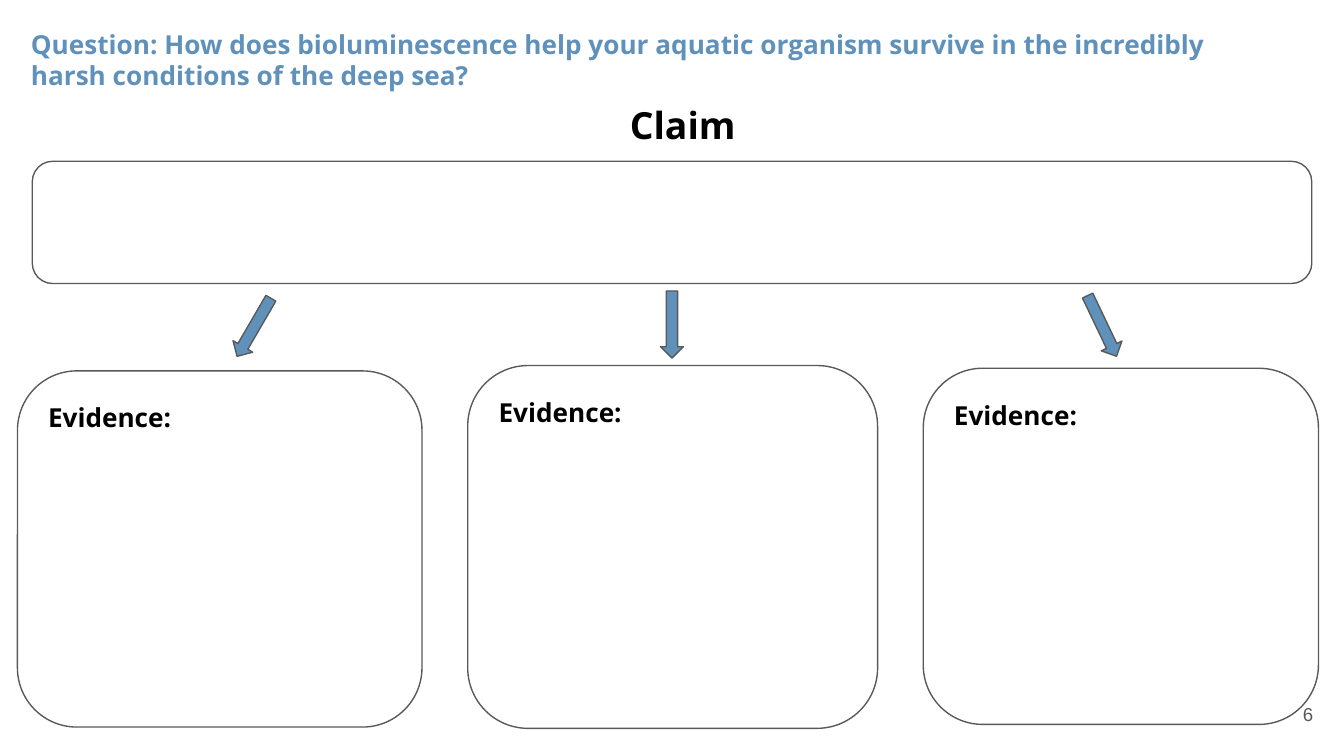
from dataclasses import dataclass

from pptx import Presentation
from pptx.dml.color import RGBColor
from pptx.enum.shapes import MSO_SHAPE as Preset
from pptx.enum.text import MSO_ANCHOR as Anchor, MSO_AUTO_SIZE as AutoSize, PP_ALIGN as Align
from pptx.shapes.autoshape import Shape
from pptx.shapes.shapetree import SlideShapes
from pptx.text.text import TextFrame
from pptx.util import Inches, Pt


@dataclass(frozen=True)
class Theme:
    accent: RGBColor = RGBColor(0x60, 0x91, 0xBA)
    ink: RGBColor = RGBColor(0x00, 0x00, 0x00)
    grey: RGBColor = RGBColor(0x59, 0x59, 0x59)
    paper: RGBColor = RGBColor(0xFF, 0xFF, 0xFF)
    font: str = "Open Sans"
    number_font: str = "Arial"
    claim_size: float = 20
    text_size: float = 14
    number_size: float = 10
    outline: float = 0.75
    inset: float = 0.1


@dataclass(frozen=True)
class Box:
    left: float
    top: float
    width: float
    height: float

    def lengths(self) -> tuple[Inches, Inches, Inches, Inches]:
        return Inches(self.left), Inches(self.top), Inches(self.width), Inches(self.height)


@dataclass(frozen=True)
class Branch:
    evidence: Box
    arrow_left: float
    arrow_top: float
    arrow_rotation: float


THEME = Theme()
SLIDE_WIDTH = 10
SLIDE_HEIGHT = SLIDE_WIDTH * 9 / 16
ARROW_WIDTH, ARROW_HEIGHT = 0.5, 0.17
QUESTION = Box(0.13, 0.11, 9.52, 0.67)
CLAIM_HEADING = Box(2.14, 0.66, 5.88, 0.54)
CLAIM = Box(0.24, 1.2, 9.52, 0.91)
PAGE_NUMBER = Box(9.27, 5.1, 0.6, 0.43)
BRANCHES = (
    Branch(Box(0.13, 2.76, 3.01, 2.65), 1.64, 2.35, 300.2),
    Branch(Box(3.48, 2.72, 3.05, 2.7), 4.75, 2.33, 270),
    Branch(Box(6.87, 2.74, 2.94, 2.65), 7.95, 2.34, 244.5),
)


def write(frame: TextFrame, text: str, size: float, color: RGBColor,
          align: Align = Align.LEFT, anchor: Anchor = Anchor.TOP,
          font: str = THEME.font, bold: bool = True) -> None:
    frame.word_wrap = True
    frame.auto_size = AutoSize.NONE
    frame.vertical_anchor = anchor
    frame.margin_left = frame.margin_right = Inches(THEME.inset)
    frame.margin_top = frame.margin_bottom = Inches(THEME.inset)
    paragraph = frame.paragraphs[0]
    paragraph.alignment = align
    run = paragraph.add_run()
    run.text = text
    run.font.name = font
    run.font.size = Pt(size)
    run.font.bold = bold
    run.font.color.rgb = color


def draw_outlined(shapes: SlideShapes, preset: Preset, box: Box, fill: RGBColor) -> Shape:
    outlined = shapes.add_shape(preset, *box.lengths())
    outlined.shadow.inherit = False
    outlined.fill.solid()
    outlined.fill.fore_color.rgb = fill
    outlined.line.color.rgb = THEME.grey
    outlined.line.width = Pt(THEME.outline)
    return outlined


def draw_evidence(shapes: SlideShapes, branch: Branch) -> None:
    evidence = draw_outlined(shapes, Preset.ROUNDED_RECTANGLE, branch.evidence, THEME.paper)
    write(evidence.text_frame, "Evidence:", THEME.text_size, THEME.ink)


def draw_arrow(shapes: SlideShapes, branch: Branch) -> None:
    box = Box(branch.arrow_left, branch.arrow_top, ARROW_WIDTH, ARROW_HEIGHT)
    arrow = draw_outlined(shapes, Preset.LEFT_ARROW, box, THEME.accent)
    arrow.rotation = branch.arrow_rotation


def main() -> None:
    deck = Presentation()
    deck.slide_width, deck.slide_height = Inches(SLIDE_WIDTH), Inches(SLIDE_HEIGHT)
    slide = deck.slides.add_slide(deck.slide_layouts[5])
    shapes = slide.shapes

    question = shapes.title
    question.left, question.top, question.width, question.height = QUESTION.lengths()
    write(question.text_frame,
          "Question: How does bioluminescence help your aquatic organism survive "
          "in the incredibly harsh conditions of the deep sea?",
          THEME.text_size, THEME.accent)

    claim_heading = shapes.add_textbox(*CLAIM_HEADING.lengths())
    write(claim_heading.text_frame, "Claim", THEME.claim_size, THEME.ink, Align.CENTER)
    draw_outlined(shapes, Preset.ROUNDED_RECTANGLE, CLAIM, THEME.paper)

    for branch in BRANCHES:
        draw_evidence(shapes, branch)
    for branch in BRANCHES:
        draw_arrow(shapes, branch)

    page_number = shapes.add_textbox(*PAGE_NUMBER.lengths())
    write(page_number.text_frame, "6", THEME.number_size, THEME.grey, Align.RIGHT,
          Anchor.MIDDLE, THEME.number_font, bold=False)

    deck.save("out.pptx")


if __name__ == "__main__":
    main()
